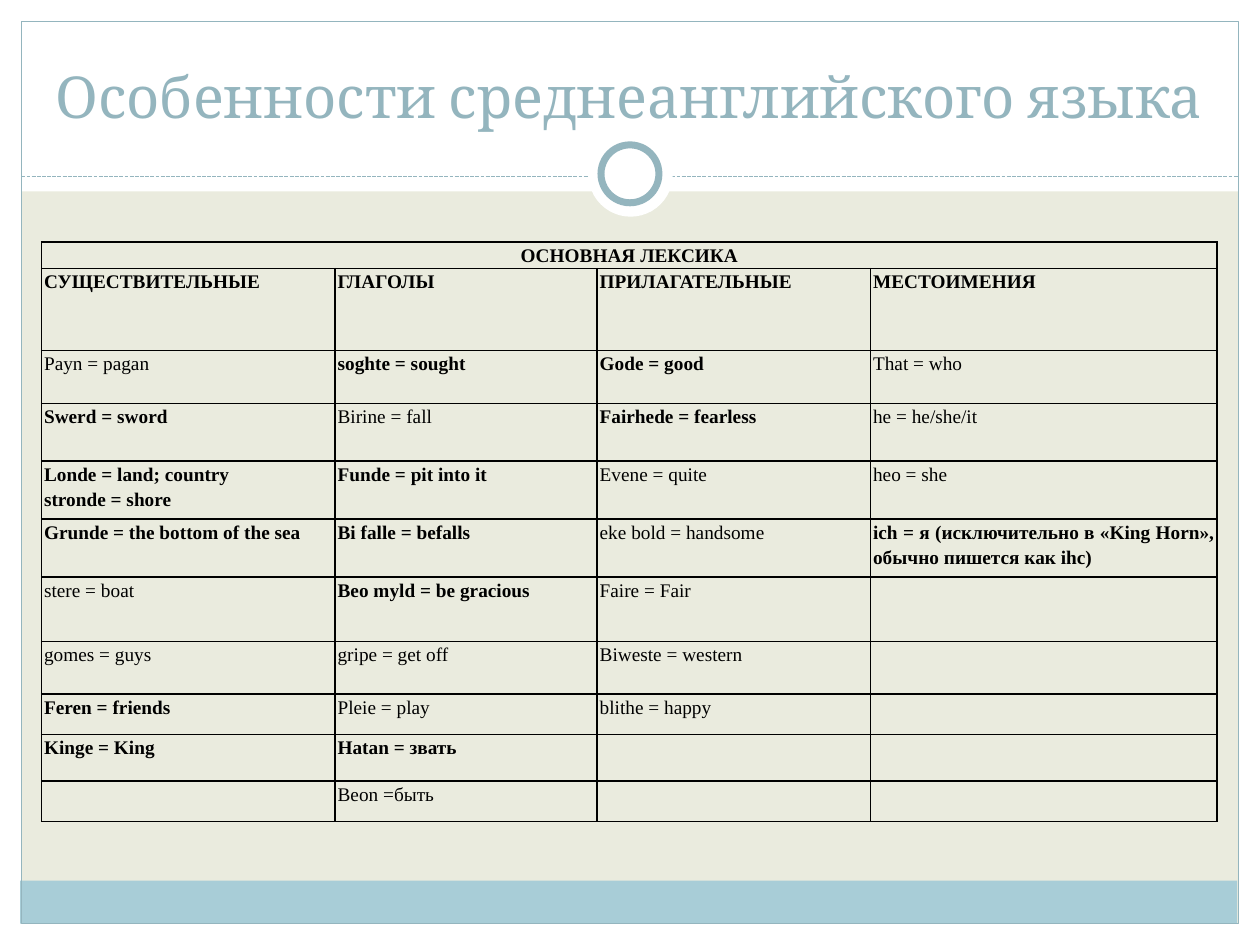
from lxml import etree
from pptx import Presentation
from pptx import util as u
from pptx.dml.color import RGBColor
from pptx.enum import dml, shapes, text
from pptx.oxml.ns import qn

COLORS = {
    "paper": "EAEBDE",
    "white": "FFFFFF",
    "band": "A8CDD7",
    "accent": "94B5BE",
    "ink": "000000",
}
FRAME_BARS = [
    (0, 7.33, 10, 0.17, "white"),
    (0, 0, 10, 1.52, "white"),
    (0, 0, 0.17, 7.5, "white"),
    (9.83, 0, 0.17, 7.5, "white"),
    (0.16, 6.99, 9.66, 0.34, "band"),
]
COLUMN_WIDTHS = [2.33, 2.08, 2.17, 2.75]
ROW_HEIGHTS = [0.2, 0.65, 0.42, 0.46, 0.46, 0.46, 0.51, 0.42, 0.32, 0.37, 0.32]
BOLD = "*"
WORDS = [
    ["*ОСНОВНАЯ ЛЕКСИКА", "", "", ""],
    ["*СУЩЕСТВИТЕЛЬНЫЕ", "*ГЛАГОЛЫ", "*ПРИЛАГАТЕЛЬНЫЕ", "*МЕСТОИМЕНИЯ"],
    ["Payn = pagan", "*soghte = sought", "*Gode = good", "That = who"],
    ["*Swerd = sword", "Birine = fall", "*Fairhede = fearless", "he = he/she/it"],
    ["*Londe = land; country\nstronde = shore", "*Funde = pit into it", "Evene = quite", "heo = shе"],
    ["*Grunde = the bottom of the sea", "*Bi falle = befalls", "eke bold = handsome",
     "*ich = я (исключительно в «King Horn», обычно пишется как ihc)"],
    ["stere = boat", "*Beo myld = be gracious", "Faire = Fair", ""],
    ["gomes = guys", "gripe = get off", "Biweste = western", ""],
    ["*Feren = friends", "Pleie = play", "blithe = happy", ""],
    ["*Kinge = King", "*Hatan = звать", "", ""],
    ["", "Beon =быть", "", ""],
]


def color(name):
    return RGBColor.from_string(COLORS[name])


def set_font(paragraph, name, size, ink, bold=False):
    paragraph.font.name = name
    paragraph.font.size = u.Pt(size)
    paragraph.font.bold = bold
    paragraph.font.color.rgb = color(ink)


def add_figure(page, kind, left, top, width, height, fill=None, line=None, weight=0.75):
    figure = page.shapes.add_shape(
        kind, u.Inches(left), u.Inches(top), u.Inches(width), u.Inches(height))
    figure.shadow.inherit = False
    if fill:
        figure.fill.solid()
        figure.fill.fore_color.rgb = color(fill)
    else:
        figure.fill.background()
    if line:
        figure.line.color.rgb = color(line)
        figure.line.width = u.Pt(weight)
    else:
        figure.line.fill.background()


def add_divider(page, left, right, top):
    divider = page.shapes.add_connector(
        shapes.MSO_CONNECTOR.STRAIGHT,
        u.Inches(left), u.Inches(top), u.Inches(right), u.Inches(top))
    divider.line.color.rgb = color("accent")
    divider.line.width = u.Pt(0.75)
    divider.line.dash_style = dml.MSO_LINE.SQUARE_DOT
    etree.SubElement(divider._element.spPr, qn("a:effectLst"))


def add_title(page, words):
    box = page.shapes.add_textbox(u.Inches(0.33), u.Inches(0.25), u.Inches(9.33), u.Inches(0.83))
    frame = box.text_frame
    frame.word_wrap = True
    frame.vertical_anchor = text.MSO_ANCHOR.BOTTOM
    para = frame.paragraphs[0]
    para.text = words
    para.alignment = text.PP_ALIGN.CENTER
    set_font(para, "Cambria", 33, "accent")


def set_borders(cell):
    properties = cell._tc.get_or_add_tcPr()
    for side in ("lnL", "lnR", "lnT", "lnB"):
        border = etree.SubElement(properties, qn(f"a:{side}"), w=str(u.Pt(1)))
        fill = etree.SubElement(border, qn("a:solidFill"))
        etree.SubElement(fill, qn("a:srgbClr"), val=COLORS["ink"])


def fill_cell(cell, words, alignment):
    cell.margin_left = cell.margin_right = u.Inches(0.02)
    cell.margin_top = cell.margin_bottom = 0
    set_borders(cell)
    cell.fill.background()
    if not words:
        return
    cell.text_frame.text = words.removeprefix(BOLD)
    for para in cell.text_frame.paragraphs:
        para.alignment = alignment
        para.line_spacing = 1.15
        set_font(para, "Times New Roman", 11, "ink", words.startswith(BOLD))


def add_word_table(page):
    table = page.shapes.add_table(
        len(ROW_HEIGHTS), len(COLUMN_WIDTHS), u.Inches(0.33), u.Inches(1.92),
        u.Inches(sum(COLUMN_WIDTHS)), u.Inches(sum(ROW_HEIGHTS))).table
    table.first_row = table.horz_banding = False
    for column, width in zip(table.columns, COLUMN_WIDTHS):
        column.width = u.Inches(width)
    for row, height in zip(table.rows, ROW_HEIGHTS):
        row.height = u.Inches(height)
    for row_index, row_words in enumerate(WORDS):
        alignment = text.PP_ALIGN.JUSTIFY if row_index else text.PP_ALIGN.CENTER
        for column_index, words in enumerate(row_words):
            fill_cell(table.cell(row_index, column_index), words, alignment)
    table.cell(0, 0).merge(table.cell(0, len(COLUMN_WIDTHS) - 1))


def main():
    deck = Presentation()
    deck.slide_width, deck.slide_height = u.Inches(10), u.Inches(7.5)
    page = deck.slides.add_slide(deck.slide_layouts[6])
    page.background.fill.solid()
    page.background.fill.fore_color.rgb = color("paper")
    rectangle, oval = shapes.MSO_SHAPE.RECTANGLE, shapes.MSO_SHAPE.OVAL
    for left, top, width, height, fill in FRAME_BARS:
        add_figure(page, rectangle, left, top, width, height, fill)
    add_figure(page, rectangle, 0.17, 0.17, 9.66, 7.16, line="accent")
    add_divider(page, 0.17, 9.83, 1.4)
    add_figure(page, oval, 4.67, 1.05, 0.67, 0.67, "white")
    add_figure(page, oval, 4.77, 1.15, 0.46, 0.46, "white", "accent", 4)
    add_title(page, "Особенности среднеанглийского языка")
    add_word_table(page)
    deck.save("out.pptx")


if __name__ == "__main__":
    main()
